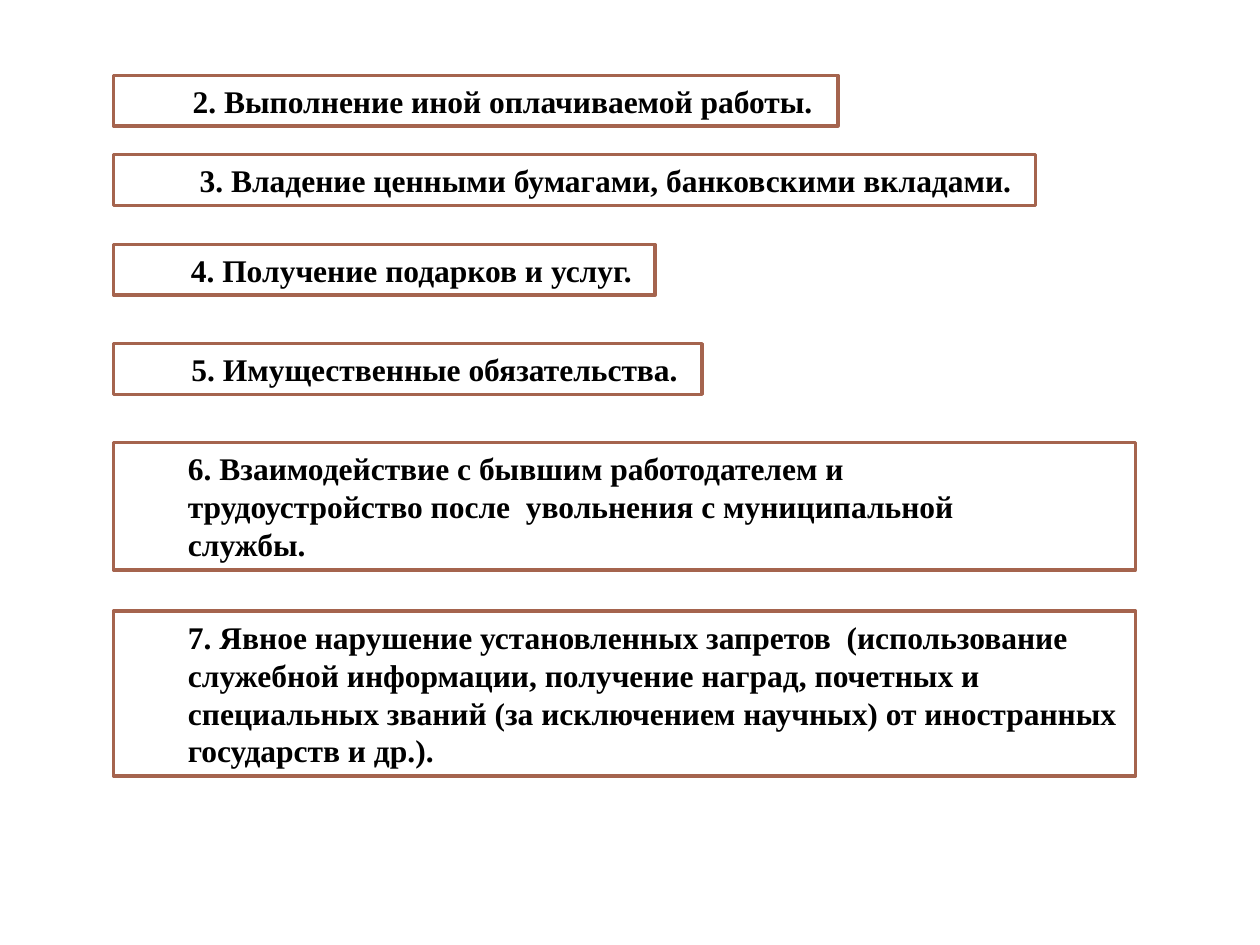
from pptx import Presentation
from pptx import util as u
from pptx.dml.color import RGBColor
from pptx.enum import shapes, text

COLORS = {"fill": "FFFFFF", "border": "A5644E", "text": "000000"}
FONT = {"name": "Times New Roman", "size": u.Pt(18), "bold": True}
LEFT = 2.29
FULL_WIDTH = 20.6
FIRST_LINE_INDENT = u.Cm(1.25)
HEIGHTS = {1: 1.02, 3: 2.57, 4: 3.33}  # by number of lines
CENTER, START = text.PP_ALIGN.CENTER, text.PP_ALIGN.LEFT

# top, width, wrap, alignment, lines
conflict_areas = [
    (1.52, 14.6, True, CENTER, ["2. Выполнение иной оплачиваемой работы. "]),
    (3.12, 18.59, True, CENTER,
     ["3. Владение ценными бумагами, банковскими вкладами."]),
    (4.93, 10.92, False, CENTER, ["4. Получение подарков и услуг. "]),
    (6.93, 11.86, False, CENTER, ["5. Имущественные обязательства. "]),
    (8.92, FULL_WIDTH, True, START, [
        "6. Взаимодействие с бывшим работодателем и",
        "трудоустройство после  увольнения с муниципальной",
        "службы.",
    ]),
    (12.32, FULL_WIDTH, True, START, [
        "7. Явное нарушение установленных запретов  (использование",
        "служебной информации, получение наград, почетных и",
        "специальных званий (за исключением научных) от иностранных",
        "государств и др.).",
    ]),
]

presentation = Presentation()
presentation.slide_width = u.Cm(25.4)
presentation.slide_height = u.Cm(19.05)
slide = presentation.slides.add_slide(presentation.slide_layouts[6])

for top, width, wrap, alignment, lines in conflict_areas:
    shape = slide.shapes.add_shape(
        shapes.MSO_SHAPE.RECTANGLE,
        u.Cm(LEFT), u.Cm(top), u.Cm(width), u.Cm(HEIGHTS[len(lines)]))
    shape.shadow.inherit = False
    shape.fill.solid()
    shape.fill.fore_color.rgb = RGBColor.from_string(COLORS["fill"])
    shape.line.color.rgb = RGBColor.from_string(COLORS["border"])
    shape.line.width = u.Pt(2)

    frame = shape.text_frame
    frame.word_wrap = wrap
    frame.auto_size = text.MSO_AUTO_SIZE.SHAPE_TO_FIT_TEXT
    frame.vertical_anchor = text.MSO_ANCHOR.MIDDLE
    frame.text = "\n".join(lines)
    for paragraph in frame.paragraphs:
        paragraph.alignment = alignment
        paragraph._p.get_or_add_pPr().set("indent", str(FIRST_LINE_INDENT))
        font = paragraph.runs[0].font
        for attribute, value in FONT.items():
            setattr(font, attribute, value)
        font.color.rgb = RGBColor.from_string(COLORS["text"])

presentation.save("out.pptx")
